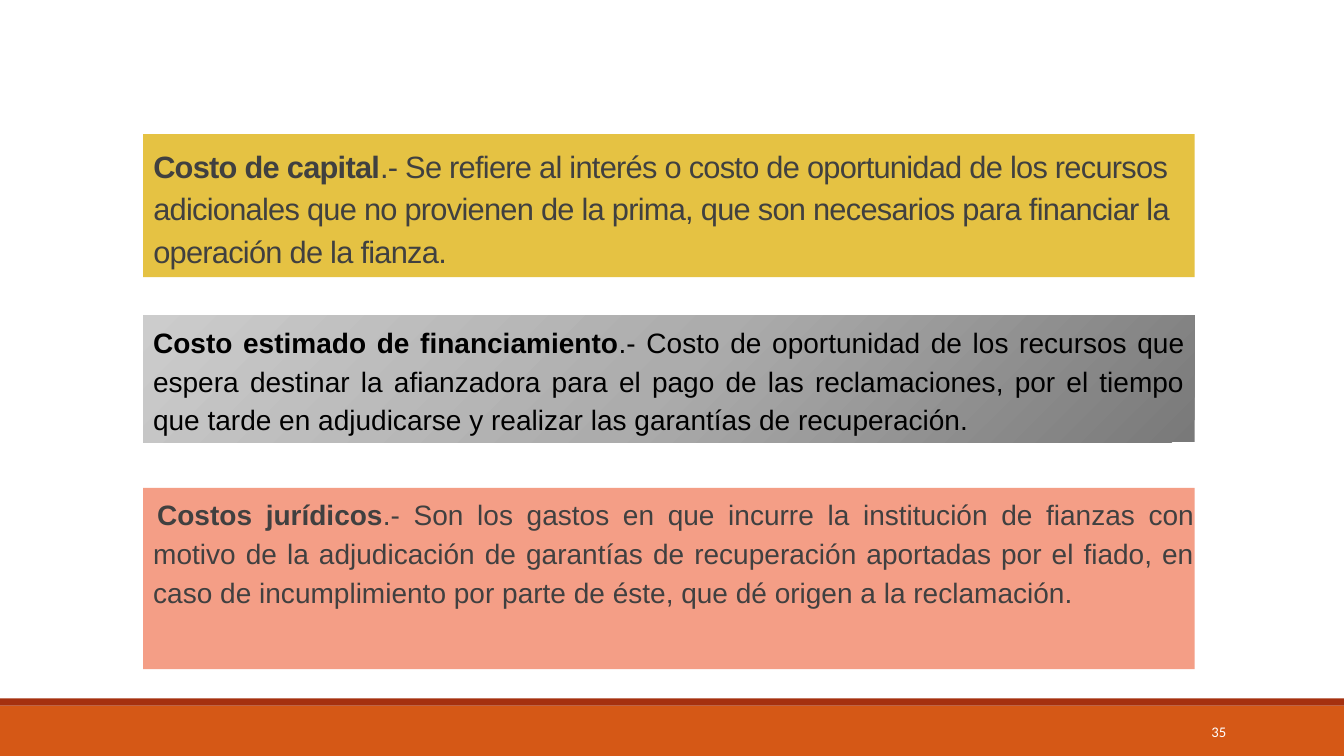
from copy import deepcopy

from lxml import etree
from pptx import Presentation
from pptx import util as u
from pptx.dml.color import RGBColor
from pptx.enum import shapes, text
from pptx.oxml import ns

WIDTH, HEIGHT = 13.33, 7.5
LEFT, COLUMN_WIDTH = 1.42, 10.43

ORANGE = RGBColor(0xD5, 0x58, 0x16)
RED = RGBColor(0xA5, 0x30, 0x0F)
YELLOW = RGBColor(0xE5, 0xC2, 0x43)
SALMON = RGBColor(0xF4, 0x9E, 0x86)
CHARCOAL = RGBColor(0x40, 0x40, 0x40)
BLACK = RGBColor(0, 0, 0)
WHITE = RGBColor(0xFF, 0xFF, 0xFF)
GRAYS = [(0, RGBColor(0x79, 0x79, 0x79)), (0.5, RGBColor(0xAC, 0xAC, 0xAC)),
         (1, RGBColor(0xCC, 0xCC, 0xCC))]

CAPITAL = ("Costo de capital",
           ".- Se refiere al interés o costo de oportunidad de los recursos adicionales "
           "que no provienen de la prima, que son necesarios para financiar la operación "
           "de la fianza.")
FINANCING = ("Costo estimado de financiamiento",
             ".- Costo de oportunidad de los recursos que espera destinar la afianzadora "
             "para el pago de las reclamaciones, por el tiempo que tarde en adjudicarse y "
             "realizar las garantías de recuperación.")
LEGAL = ("Costos jurídicos",
         ".- Son los gastos en que incurre la institución de fianzas con motivo de la "
         "adjudicación de garantías de recuperación aportadas por el fiado, en caso de "
         "incumplimiento por parte de éste, que dé origen a la reclamación.")


def add_rectangle(page, left, top, width, height):
    box = page.shapes.add_shape(shapes.MSO_SHAPE.RECTANGLE, u.Inches(left),
                                u.Inches(top), u.Inches(width), u.Inches(height))
    box.shadow.inherit = False
    box.line.fill.background()
    return box


def fill_solid(box, color):
    box.fill.solid()
    box.fill.fore_color.rgb = color


def fill_gradient(box, stops, angle):
    box.fill.gradient()
    box.fill.gradient_angle = angle
    stop_list = next(box._element.spPr.iter(ns.qn("a:gsLst")))
    while len(stop_list) < len(stops):
        stop_list.append(deepcopy(stop_list[-1]))
    for stop, (position, color) in zip(box.fill.gradient_stops, stops):
        stop.position = position
        stop.color.rgb = color


def write_definition(box, definition, size, color, align, anchor):
    """Write a bold term followed by its plain explanation."""
    frame = box.text_frame
    frame.word_wrap = True
    frame.auto_size = text.MSO_AUTO_SIZE.NONE
    frame.vertical_anchor = anchor
    para = frame.paragraphs[0]
    para.alignment = align
    para.line_spacing = 1.15
    para.space_after = u.Pt(12)
    for words, bold in zip(definition, (True, False)):
        span = para.add_run()
        span.text = words
        span.font.name = "Arial"
        span.font.size = u.Pt(size)
        span.font.bold = bold
        span.font.color.rgb = color
    return para


def capital_cost(page, top, height):
    title = page.shapes.title
    title.left, title.top = u.Inches(LEFT), u.Inches(top)
    title.width, title.height = u.Inches(COLUMN_WIDTH), u.Inches(height)
    fill_solid(title, YELLOW)
    para = write_definition(title, CAPITAL, 22, CHARCOAL,
                            text.PP_ALIGN.LEFT, text.MSO_ANCHOR.MIDDLE)
    for span in para.runs:
        span.font._element.set("spc", "-50")


def financing_cost(page, top, height):
    box = add_rectangle(page, LEFT, top, COLUMN_WIDTH, height)
    fill_gradient(box, GRAYS, 135)
    write_definition(box, FINANCING, 20, BLACK,
                     text.PP_ALIGN.JUSTIFY, text.MSO_ANCHOR.TOP)


def legal_costs(page, top, height):
    box = add_rectangle(page, LEFT, top, COLUMN_WIDTH, height)
    fill_solid(box, SALMON)
    box.text_frame.margin_left = box.text_frame.margin_right = 0
    para = write_definition(box, LEGAL, 20, CHARCOAL,
                            text.PP_ALIGN.JUSTIFY, text.MSO_ANCHOR.TOP)
    para.space_before = u.Pt(12)
    properties = para._p.get_or_add_pPr()
    properties.set("marL", str(u.Inches(0.1)))
    properties.set("indent", str(-u.Inches(0.1)))
    etree.SubElement(properties, ns.qn("a:buChar"), char=" ")


def footer(page, number, height=0.5, stripe=0.07):
    top = HEIGHT - height
    fill_solid(add_rectangle(page, 0, top, WIDTH, height), ORANGE)
    fill_solid(add_rectangle(page, 0, top - stripe, WIDTH, stripe), RED)
    box = page.shapes.add_textbox(u.Inches(10.83), u.Inches(top + 0.06),
                                  u.Inches(1.43), u.Inches(0.4))
    frame = box.text_frame
    frame.word_wrap = True
    frame.vertical_anchor = text.MSO_ANCHOR.MIDDLE
    frame.text = number
    para = frame.paragraphs[0]
    para.alignment = text.PP_ALIGN.RIGHT
    font = para.runs[0].font
    font.name, font.size = "Calibri", u.Pt(10.5)
    font.color.rgb = WHITE


def main():
    deck = Presentation()
    deck.slide_width, deck.slide_height = u.Inches(WIDTH), u.Inches(HEIGHT)
    page = deck.slides.add_slide(deck.slide_layouts[5])
    footer(page, "35")
    capital_cost(page, 1.33, 1.42)
    financing_cost(page, 3.13, 1.26)
    legal_costs(page, 4.84, 1.8)
    deck.save("out.pptx")


if __name__ == "__main__":
    main()
